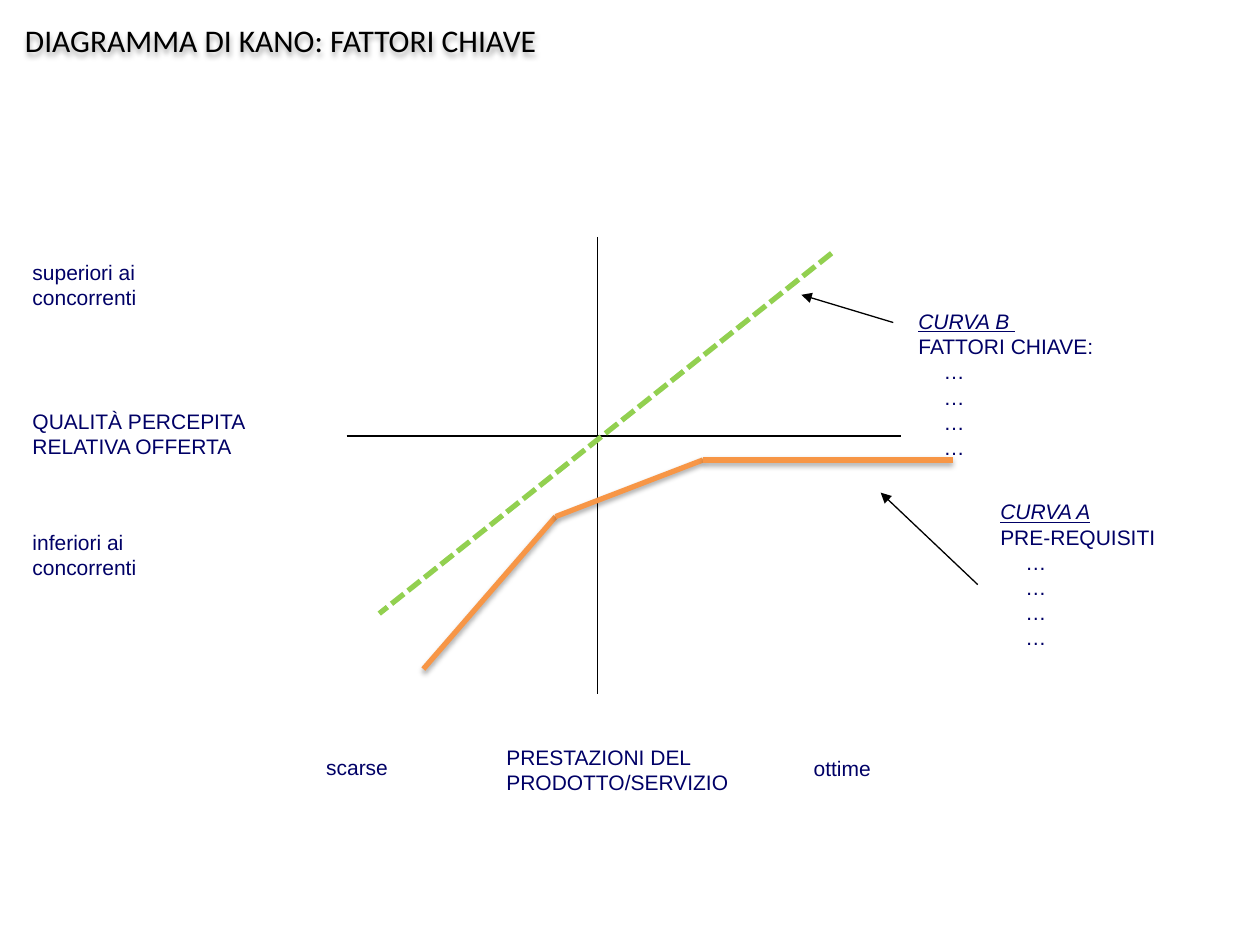
from itertools import pairwise

from pptx import Presentation
from pptx.dml.color import RGBColor
from pptx.enum import dml, shapes, text
from pptx.oxml import parse_xml
from pptx.oxml.ns import nsdecls
from pptx.util import Inches, Pt

COLORS = {"title": "000000", "label": "000066", "axis": "000000",
          "curve_a": "F79646", "curve_b": "92D050"}

# Content: (left, top, width, height), paragraphs
TITLE = ((0.1, 0.12, 7.66, 0.4), ["DIAGRAMMA DI KANO: FATTORI CHIAVE"])
AXIS_LABELS = [
    ((0.16, 3.19, 2.36, 0.96), ["QUALITÀ PERCEPITA", "RELATIVA OFFERTA"]),
    ((0.16, 2.01, 1.53, 0.5), ["superiori ai concorrenti"]),
    ((0.16, 4.15, 1.53, 0.5), ["inferiori ai concorrenti"]),
    ((3.92, 5.86, 2.18, 0.49), ["PRESTAZIONI DEL PRODOTTO/SERVIZIO"]),
    ((6.36, 5.95, 0.97, 0.31), ["ottime"]),
    ((2.49, 5.94, 1.21, 0.33), ["scarse"]),
]
DOTS = "\n…" * 4
CURVE_LABELS = [
    ((7.19, 2.4, 2.38, 1.97), ["CURVA B ", "FATTORI CHIAVE:" + DOTS]),
    ((7.84, 3.91, 1.88, 2.02), ["CURVA A", "PRE-REQUISITI" + DOTS]),
]
AXES = [((4.74, 1.88), (4.74, 5.51)), ((2.75, 3.46), (7.15, 3.46))]
POINTERS = [((7.09, 2.56), (6.36, 2.34)), ((7.76, 4.64), (6.99, 3.91))]
CURVE_A = [(3.36, 5.31), (4.41, 4.1), (5.58, 3.65), (7.56, 3.65)]
CURVE_B = [(6.6, 2.01), (3.01, 4.87)]

SHADOW = ('<a:outerShdw blurRad="39370" dist="22860" dir="5400000" rotWithShape="0">'
          '<a:srgbClr val="000000"><a:alpha val="35000"/></a:srgbClr></a:outerShdw>')

presentation = Presentation()
presentation.slide_width, presentation.slide_height = Inches(10), Inches(7.5)
slide = presentation.slides.add_slide(presentation.slide_layouts[6])


def set_effects(shape, effects=""):
    shape._element.spPr.append(
        parse_xml(f'<a:effectLst {nsdecls("a")}>{effects}</a:effectLst>'))


def add_line(start, end, color, width=0.75, dash=None, arrow=False, shadow=""):
    line = slide.shapes.add_connector(
        shapes.MSO_CONNECTOR.STRAIGHT, *map(Inches, start + end))
    line.line.color.rgb = RGBColor.from_string(COLORS[color])
    line.line.width = Pt(width)
    if dash:
        line.line.dash_style = dash
    if arrow:
        line.line._get_or_add_ln().append(
            parse_xml(f'<a:tailEnd {nsdecls("a")} type="triangle"/>'))
    set_effects(line, shadow)


def add_text(box, paragraphs, size=12, font="Arial", color="label"):
    shape = slide.shapes.add_textbox(*map(Inches, box))
    frame = shape.text_frame
    frame.word_wrap = True
    for index, content in enumerate(paragraphs):
        paragraph = frame.add_paragraph() if index else frame.paragraphs[0]
        paragraph.text = content
        for run in paragraph.runs:
            run.font.size, run.font.name = Pt(size), font
            run.font.color.rgb = RGBColor.from_string(COLORS[color])
    return shape


# Axes and their labels
for start, end in AXES:
    add_line(start, end, "axis")
for box, paragraphs in AXIS_LABELS:
    add_text(box, paragraphs)

# Curve B, then the curve descriptions with their pointers
add_line(*CURVE_B, "curve_b", width=3, dash=dml.MSO_LINE.SQUARE_DOT)
for (box, paragraphs), pointer in zip(CURVE_LABELS, POINTERS):
    frame = add_text(box, paragraphs).text_frame
    for paragraph in frame.paragraphs:
        properties = paragraph._p.get_or_add_pPr()
        properties.set("marL", str(Inches(0.2)))
        properties.set("indent", str(-Inches(0.2)))
    heading = frame.paragraphs[0]
    heading.alignment = text.PP_ALIGN.JUSTIFY
    heading.runs[0].font.italic = heading.runs[0].font.underline = True
    add_line(*pointer, "axis", arrow=True)

# Curve A
for start, end in pairwise(CURVE_A):
    add_line(start, end, "curve_a", width=3, shadow=SHADOW)

# Title
title = add_text(*TITLE, size=18, font="Calibri", color="title")
title.text_frame.vertical_anchor = text.MSO_ANCHOR.MIDDLE
set_effects(title, SHADOW)

presentation.save("out.pptx")
